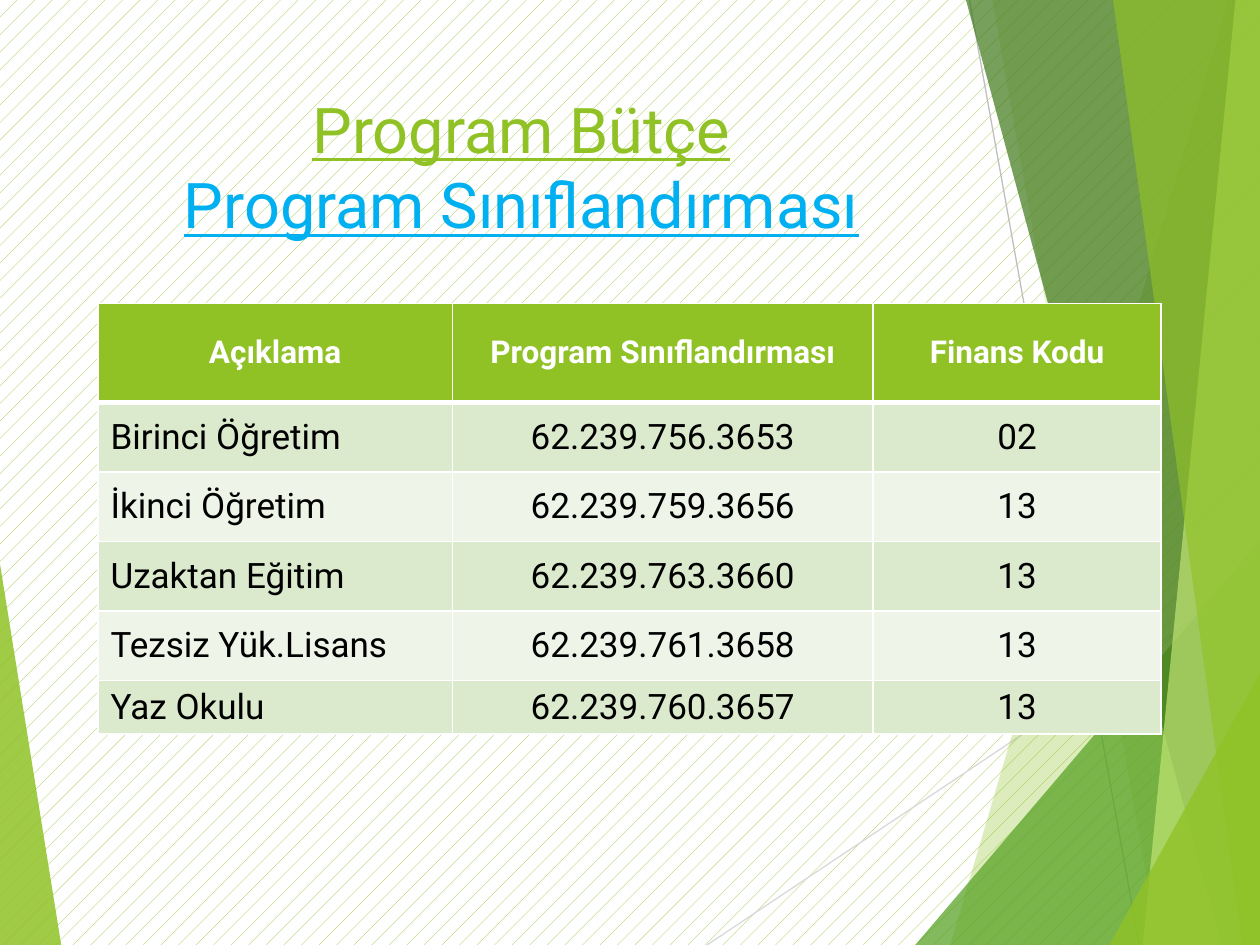
import pptx
import pptx.dml.color
import pptx.enum.dml
import pptx.enum.shapes
import pptx.enum.text
import pptx.oxml
import pptx.oxml.ns
import pptx.util

Pt = pptx.util.Pt
RGB = pptx.dml.color.RGBColor
Align = pptx.enum.text.PP_ALIGN
Anchor = pptx.enum.text.MSO_ANCHOR
qn = pptx.oxml.ns.qn

LIME = RGB(0x90, 0xC2, 0x26)
GREEN = RGB(0x54, 0xA0, 0x21)
DARK = RGB(0x3F, 0x78, 0x19)
PALE = RGB(0xC0, 0xE4, 0x74)
BLUE = RGB(0x00, 0xB0, 0xF0)
BAND = RGB(0xDB, 0xE9, 0xCD)
LIGHT = RGB(0xEE, 0xF4, 0xE8)
GRAY = RGB(0xBF, 0xBF, 0xBF)
SILVER = RGB(0xD9, 0xD9, 0xD9)
WHITE = RGB(0xFF, 0xFF, 0xFF)
BLACK = RGB(0, 0, 0)

WIDE, HIGH = 720, 540
FOOT = [(WIDE, HIGH)]
EDGE = [(WIDE, HIGH), (WIDE, 0)]

# Corner points, colour, opacity in percent
BACK = [
    ([(-1, 316), (35, HIGH), (-1, HIGH)], LIME, 85),
]
FACETS = [
    ([(702, 0), (543, HIGH)] + EDGE, LIME, 30),
    ([(567, 0), (662, HIGH)] + EDGE, LIME, 20),
    ([(523, HIGH), (WIDE, 309)] + FOOT, GREEN, 72),
    ([(552, 0), (698, HIGH)] + EDGE, DARK, 70),
    ([(706, 0), (653, HIGH)] + EDGE, PALE, 70),
    ([(636, 0), (710, HIGH)] + EDGE, LIME, 65),
    ([(634, HIGH), (WIDE, 385)] + FOOT, LIME, 80),
]

ROWS = [
    ("Açıklama", "Program Sınıflandırması", "Finans Kodu"),
    ("Birinci Öğretim", "62.239.756.3653", "02"),
    ("İkinci Öğretim", "62.239.759.3656", "13"),
    ("Uzaktan Eğitim", "62.239.763.3660", "13"),
    ("Tezsiz Yük.Lisans", "62.239.761.3658", "13"),
    ("Yaz Okulu", "62.239.760.3657", "13"),
]


class Deck:
    font = "Roboto"

    def __init__(self):
        self.show = pptx.Presentation()
        self.show.slide_width, self.show.slide_height = Pt(WIDE), Pt(HIGH)
        self.slide = self.show.slides.add_slide(self.show.slide_layouts[5])
        self.shapes = self.slide.shapes

    def ground(self, fore, back):
        fill = self.slide.background.fill
        fill.patterned()
        fill.pattern = pptx.enum.dml.MSO_PATTERN.PERCENT_5
        fill.fore_color.rgb, fill.back_color.rgb = fore, back

    def facet(self, points, color, alpha):
        """Draw a see-through polygon."""
        start, *rest = [(Pt(x), Pt(y)) for x, y in points]
        pen = self.shapes.build_freeform(*start, scale=1.0)
        pen.add_line_segments(rest, close=True)
        shape = pen.convert_to_shape()
        shape.shadow.inherit = False
        shape.line.fill.background()
        shape.fill.solid()
        shape.fill.fore_color.rgb = color
        tint = shape._element.spPr.find(qn("a:solidFill")).find(qn("a:srgbClr"))
        pptx.oxml.xmlchemy.OxmlElement("a:alpha")
        self.child(tint, "a:alpha", val=alpha * 1000)

    def child(self, parent, tag, **attrs):
        node = parent.makeelement(qn(tag), {k: str(v) for k, v in attrs.items()})
        parent.append(node)
        return node

    def line(self, start, end, color):
        kind = pptx.enum.shapes.MSO_CONNECTOR.STRAIGHT
        rule = self.shapes.add_connector(kind, *map(Pt, start + end))
        rule.line.color.rgb = color
        rule.line.width = Pt(0.75)
        self.child(rule._element.spPr, "a:effectLst")

    def title(self, box, parts, size):
        """Fill the title, one line for each (text, colour) pair."""
        head = self.shapes.title
        head.left, head.top, head.width, head.height = map(Pt, box)
        self.shapes._spTree.append(head._element)  # in front of the facets
        frame = head.text_frame
        frame.word_wrap = True
        frame.vertical_anchor = Anchor.TOP
        para = frame.paragraphs[0]
        para.alignment = Align.CENTER
        para.font.name, para.font.size = self.font, Pt(size)
        para.font.underline = True
        for n, (text, color) in enumerate(parts):
            if n:
                para.add_line_break()
            run = para.add_run()
            run.text = text
            run.font.color.rgb = color

    def border(self, cell, **widths):
        props = cell._tc.get_or_add_tcPr()
        for side in "LRTB":
            width = Pt(widths.get(side, 1))
            line = self.child(props, "a:ln" + side, w=width)
            fill = self.child(line, "a:solidFill")
            self.child(fill, "a:srgbClr", val=WHITE)

    def cell(self, cell, text, row, col):
        head = row == 0
        self.border(cell, B=3 if head else 1, T=3 if row == 1 else 1)
        cell.fill.solid()
        cell.fill.fore_color.rgb = LIME if head else BAND if row % 2 else LIGHT
        cell.vertical_anchor = Anchor.MIDDLE
        cell.text = text
        para = cell.text_frame.paragraphs[0]
        para.alignment = Align.CENTER if head or col else Align.LEFT
        font = para.font
        font.name, font.size, font.bold = self.font, Pt(18 if head else 20), head
        font.color.rgb = WHITE if head else BLACK

    def table(self, left, top, wides, highs, rows):
        grid = self.shapes.add_table(
            len(rows), len(wides), Pt(left), Pt(top), Pt(sum(wides)), Pt(sum(highs))
        ).table
        for col, wide in zip(grid.columns, wides):
            col.width = Pt(wide)
        for row, high in zip(grid.rows, highs):
            row.height = Pt(high)
        for r, texts in enumerate(rows):
            for c, text in enumerate(texts):
                self.cell(grid.cell(r, c), text, r, c)


def main():
    deck = Deck()
    deck.ground(LIME, WHITE)
    for facet in BACK:
        deck.facet(*facet)
    deck.line((404, HIGH), (WIDE, 329), SILVER)
    deck.line((554, 0), (651, HIGH), GRAY)
    for facet in FACETS:
        deck.facet(*facet)
    deck.title(
        (48, 48, 500, 104),
        [("Program Bütçe", LIME), ("Program Sınıflandırması", BLUE)],
        36,
    )
    deck.table(56, 173.5, [202.5, 240.5, 164.5], [56.5] + [39.7] * 4 + [29.5], ROWS)
    deck.show.save("out.pptx")


if __name__ == "__main__":
    main()
